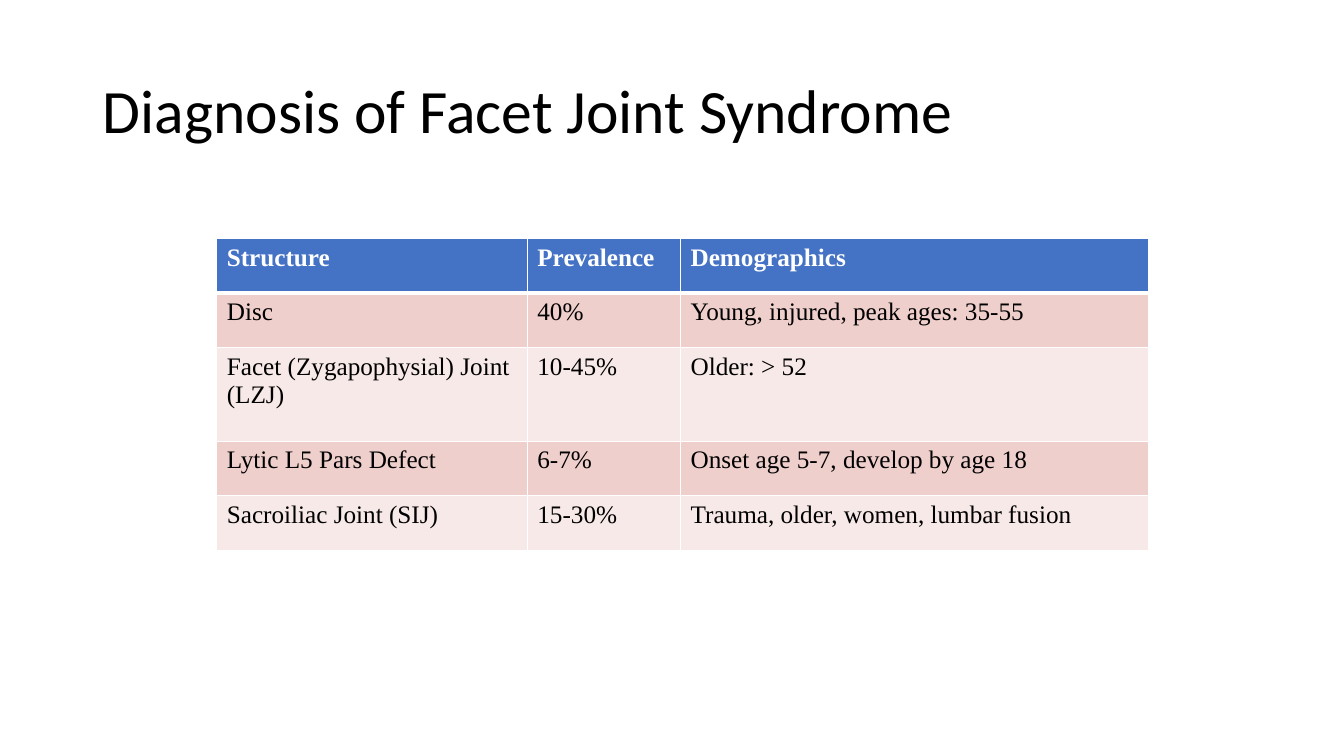
from lxml.etree import SubElement
from pptx import Presentation
from pptx.dml.color import RGBColor
from pptx.enum.text import MSO_ANCHOR, PP_ALIGN
from pptx.oxml.ns import qn
from pptx.util import Pt

PX = 9144
COLORS = {
    "white": "FFFFFF",
    "black": "000000",
    "header": "4472C4",
    "dark_band": "EFCFCC",
    "light_band": "F7E9E7",
}
COLUMN_WIDTHS = [308, 152, 464]
ROW_HEIGHTS = [54, 54, 93, 54, 54]
ROWS = [
    ("Structure", "Prevalence", "Demographics"),
    ("Disc", "40%", "Young, injured, peak ages: 35-55"),
    ("Facet (Zygapophysial) Joint (LZJ)", "10-45%", "Older: > 52"),
    ("Lytic L5 Pars Defect", "6-7%", "Onset age 5-7, develop by age 18"),
    ("Sacroiliac Joint (SIJ)", "15-30%", "Trauma, older, women, lumbar fusion"),
]


def color(name):
    """Return the named colour."""
    return RGBColor.from_string(COLORS[name])


def set_font(para, family, size, color_name, bold=False):
    """Format the whole paragraph."""
    para.font.name = family
    para.font.size = Pt(size)
    para.font.bold = bold
    para.font.color.rgb = color(color_name)


def add_title(page, text, left, top, width, height):
    """Fill the title placeholder and place it in the given box."""
    title = page.shapes.title
    title.left, title.top = left * PX, top * PX
    title.width, title.height = width * PX, height * PX
    title.text_frame.text = text
    title.text_frame.vertical_anchor = MSO_ANCHOR.MIDDLE
    para = title.text_frame.paragraphs[0]
    para.alignment = PP_ALIGN.LEFT
    para.line_spacing = 0.9
    set_font(para, "Calibri", 44, "black")


def set_borders(cell, top_points, bottom_points):
    """Draw white borders around a cell."""
    properties = cell._tc.get_or_add_tcPr()
    widths = {"lnL": 1, "lnR": 1, "lnT": top_points, "lnB": bottom_points}
    for side, points in widths.items():
        line = SubElement(properties, qn(f"a:{side}"), w=str(Pt(points)))
        fill = SubElement(line, qn("a:solidFill"))
        SubElement(fill, qn("a:srgbClr"), val=COLORS["white"])


def fill_cell(cell, text, row_index):
    """Write and format one cell as header or band."""
    is_header = row_index == 0
    band = "dark_band" if row_index % 2 else "light_band"
    set_borders(cell, 3 if row_index == 1 else 1, 3 if is_header else 1)
    cell.fill.solid()
    cell.fill.fore_color.rgb = color("header" if is_header else band)
    cell.text = text
    set_font(cell.text_frame.paragraphs[0], "Times New Roman", 18,
             "white" if is_header else "black", is_header)


def add_prevalence_table(page, left, top):
    """Place the prevalence table with its corner at the given point."""
    table = page.shapes.add_table(
        len(ROWS), len(COLUMN_WIDTHS), left * PX, top * PX,
        sum(COLUMN_WIDTHS) * PX, sum(ROW_HEIGHTS) * PX).table
    for column, width in zip(table.columns, COLUMN_WIDTHS):
        column.width = width * PX
    for row_index, texts in enumerate(ROWS):
        row = table.rows[row_index]
        row.height = ROW_HEIGHTS[row_index] * PX
        for cell, text in zip(row.cells, texts):
            fill_cell(cell, text, row_index)


def main():
    """Build and save the slide."""
    deck = Presentation()
    deck.slide_width, deck.slide_height = 1333 * PX, 750 * PX
    page = deck.slides.add_slide(deck.slide_layouts[5])
    add_title(page, "Diagnosis of Facet Joint Syndrome", 92, 40, 1150, 145)
    add_prevalence_table(page, 215, 237)
    deck.save("out.pptx")


if __name__ == "__main__":
    main()
